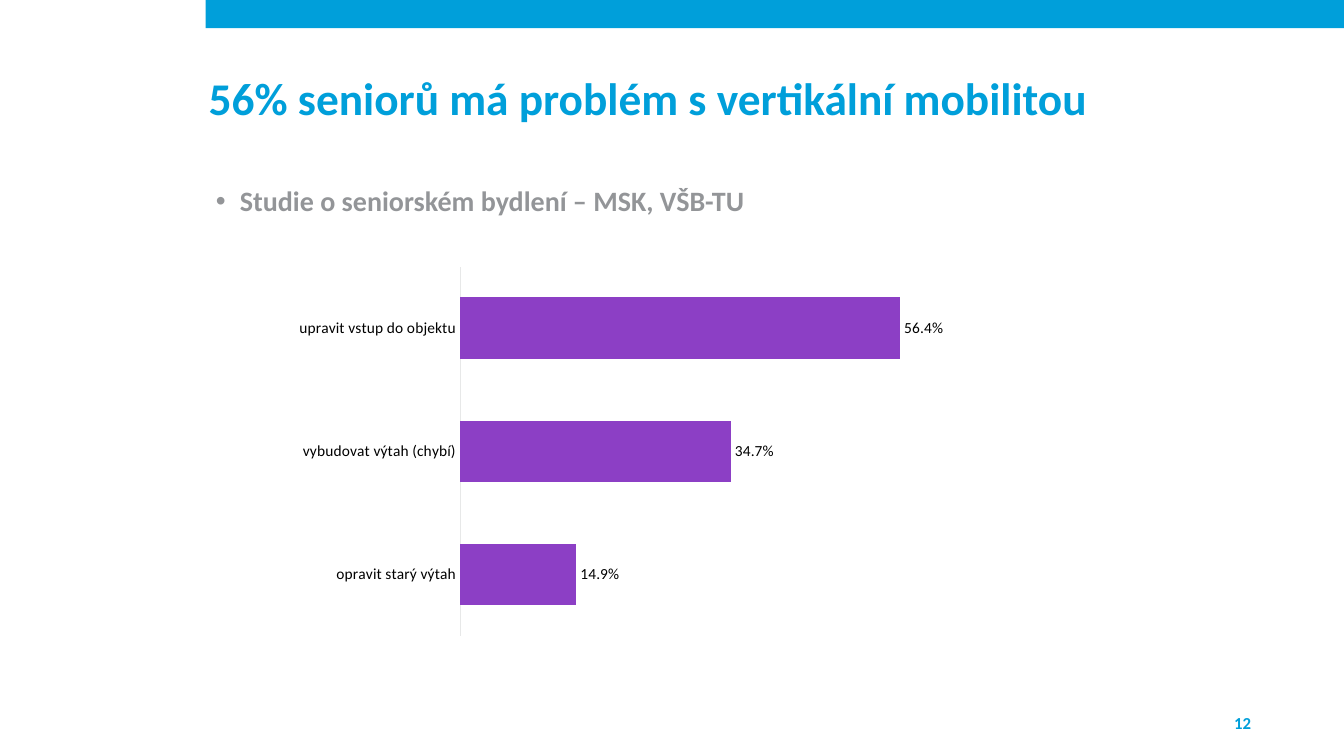
from lxml import etree
from pptx import Presentation
from pptx.chart.data import CategoryChartData
from pptx.dml.color import RGBColor
from pptx.enum.chart import XL_CHART_TYPE, XL_LABEL_POSITION, XL_TICK_MARK
from pptx.enum.shapes import MSO_SHAPE
from pptx.enum.text import MSO_ANCHOR, MSO_AUTO_SIZE, PP_ALIGN
from pptx.oxml.ns import qn
from pptx.util import Inches, Pt

BLUE, GRAY, PURPLE, BLACK = "009FDA", "939598", "8C3FC5", "000000"


def color(hex_value):
    return RGBColor.from_string(hex_value)


def style(font, size, hex_value, bold=False):
    font.name, font.size, font.bold = "Calibri", Pt(size), bold
    font.color.rgb = color(hex_value)


prs = Presentation()
prs.slide_width, prs.slide_height = Inches(13.33), Inches(7.5)
slide = prs.slides.add_slide(prs.slide_layouts[1])

# Top band
band = slide.shapes.add_shape(
    MSO_SHAPE.RECTANGLE, Inches(2.04), 0, Inches(11.29), Inches(0.28))
band.shadow.inherit = False
band.fill.solid()
band.fill.fore_color.rgb = color(BLUE)
band.line.fill.background()

# Title
title = slide.shapes.title
title.left, title.top = Inches(1.97), Inches(0.36)
title.width, title.height = Inches(10.37), Inches(1.45)
heading = title.text_frame
heading.text = "56% seniorů má problém s vertikální mobilitou"
heading.auto_size = MSO_AUTO_SIZE.NONE
heading.vertical_anchor = MSO_ANCHOR.MIDDLE
heading.margin_bottom = Inches(0.22)
heading_line = heading.paragraphs[0]
heading_line.alignment = PP_ALIGN.LEFT
heading_line.line_spacing = 0.9
style(heading_line.font, 32.4, BLUE, True)

# Study bullet
study = slide.placeholders[1]
study.left, study.top = Inches(2.04), Inches(1.81)
study.width, study.height = Inches(10.66), Inches(4.39)
study.text_frame.text = "Studie o seniorském bydlení – MSK, VŠB-TU"
study.text_frame.auto_size = MSO_AUTO_SIZE.NONE
study_line = study.text_frame.paragraphs[0]
study_line.line_spacing = 0.9
study_line.space_before, study_line.space_after = Pt(0), Pt(6)
study_props = study_line._p.get_or_add_pPr()
study_props.set("marL", str(Inches(0.24)))
study_props.set("indent", str(Inches(-0.24)))
etree.SubElement(study_props, qn("a:buChar"), char="•")
style(study_line.font, 20, GRAY, True)

# Bar chart of needed changes
needs = CategoryChartData(number_format="0.0%")
needs.categories = ["opravit starý výtah", "vybudovat výtah (chybí)",
                    "upravit vstup do objektu"]
needs.add_series("Series 1", (0.149, 0.347, 0.564))
chart = slide.shapes.add_chart(
    XL_CHART_TYPE.BAR_CLUSTERED, Inches(2.2), Inches(2.46),
    Inches(7.48), Inches(4.04), needs).chart
chart.has_legend = chart.has_title = False
style(chart.font, 10, BLACK)

category_axis = chart.category_axis
category_axis.major_tick_mark = category_axis.minor_tick_mark = XL_TICK_MARK.NONE
category_axis.format.line.color.rgb = color("E7E8E8")
category_axis.format.line.width = Pt(0.75)
style(category_axis.tick_labels.font, 11, BLACK)

value_axis = chart.value_axis
value_axis.minimum_scale, value_axis.maximum_scale = 0, 0.6
value_axis.has_major_gridlines = False
value_axis.visible = False

bars = chart.plots[0]
bars.gap_width = 100
bars.vary_by_categories = False
bars.series[0].format.fill.solid()
bars.series[0].format.fill.fore_color.rgb = color(PURPLE)
labels = bars.series[0].data_labels
labels.show_value = True
labels.number_format, labels.number_format_is_linked = "0.0%", False
labels.position = XL_LABEL_POSITION.OUTSIDE_END
style(labels.font, 11, BLACK)

# Fixed inner plot area, as fractions of the chart
plot_area = chart._chartSpace.chart.plotArea
for old_layout in plot_area.findall(qn("c:layout")):
    plot_area.remove(old_layout)
layout = etree.Element(qn("c:layout"))
plot_area.insert(0, layout)
manual = etree.SubElement(layout, qn("c:manualLayout"))
for tag, value in (("layoutTarget", "inner"), ("xMode", "edge"), ("yMode", "edge"),
                   ("x", "0.316"), ("y", "0.046"), ("w", "0.621"), ("h", "0.907")):
    etree.SubElement(manual, qn(f"c:{tag}"), val=value)

# Page number
page_number = slide.shapes.add_textbox(
    Inches(10.84), Inches(7.05), Inches(1.57), Inches(0.24)).text_frame
page_number.word_wrap = True
page_number.vertical_anchor = MSO_ANCHOR.MIDDLE
page_number.margin_left = page_number.margin_right = 0
page_number.margin_top = page_number.margin_bottom = 0
page_number.text = "12"
page_number.paragraphs[0].alignment = PP_ALIGN.RIGHT
style(page_number.paragraphs[0].font, 12, BLUE, True)

prs.save("out.pptx")
